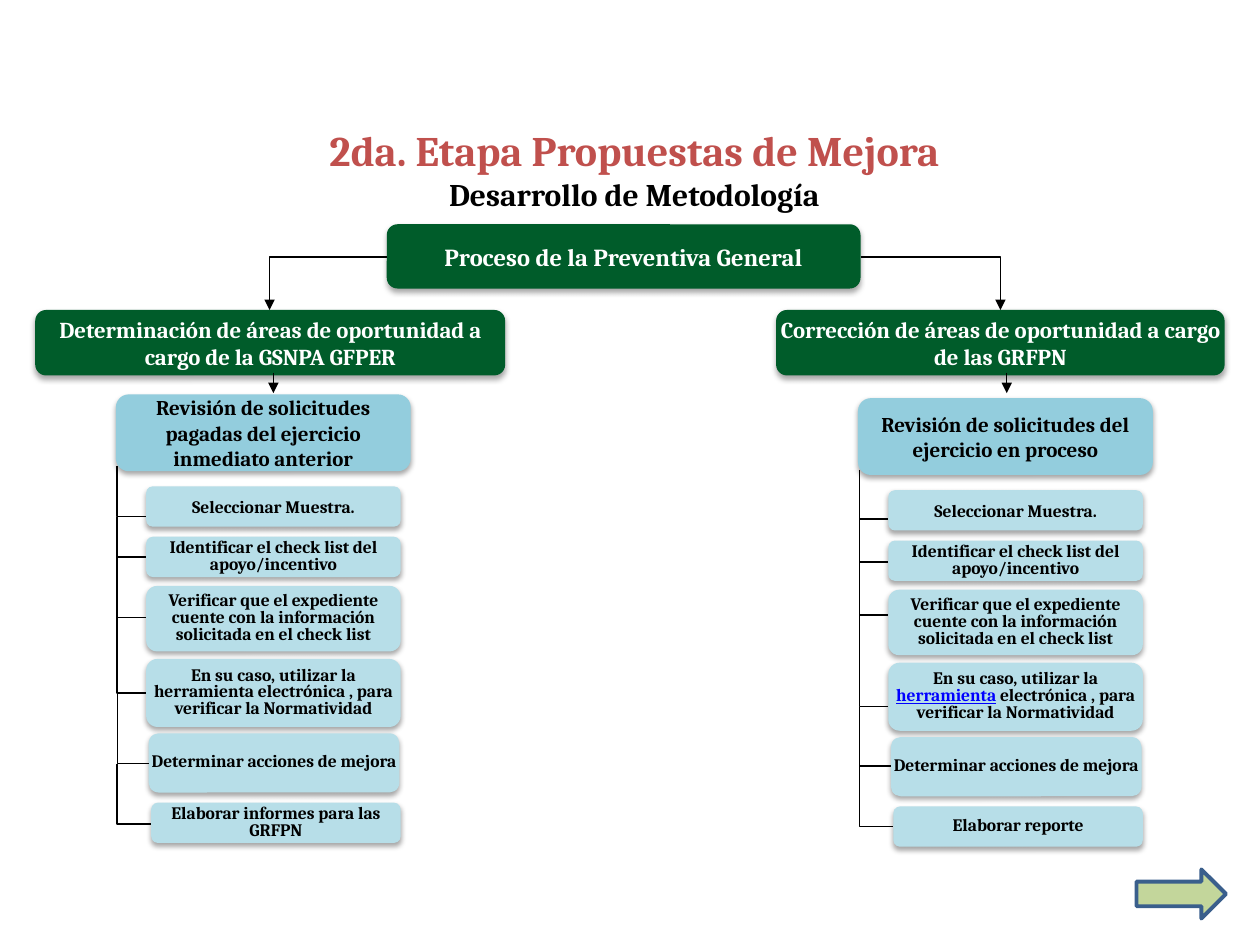
import pptx
import pptx.util
import pptx.dml.color
import pptx.enum.shapes
import pptx.enum.text
import pptx.oxml.ns
from lxml import etree

SHAPE = pptx.enum.shapes.MSO_SHAPE
LINK = pptx.enum.shapes.MSO_CONNECTOR
ANCHOR = pptx.enum.text.MSO_ANCHOR
CENTER = pptx.enum.text.PP_ALIGN.CENTER
FONT = "Cambria"
GREEN, BLUE, PALE = "005C2A", "93CDDD", "B7DEE8"
BLACK, WHITE = "000000", "FFFFFF"

STEPS = [
    (2.4, 38.6, 20.2, 3.2),
    (2.4, 42.6, 20.2, 3.2),
    (2.4, 46.5, 20.2, 5.2),
    (2.4, 52.3, 20.2, 5.4),
    (2.6, 58.2, 19.9, 4.7),
    (2.8, 63.7, 19.8, 3.2),
]
TASKS = [
    "Seleccionar Muestra.",
    "Identificar el check list del apoyo/incentivo",
    "Verificar que el expediente cuente con la información solicitada en el check list",
]
LEFT = TASKS + [
    "En su caso, utilizar la herramienta electrónica , para verificar la Normatividad",
    "Determinar acciones de mejora",
    "Elaborar informes para las GRFPN",
]
RIGHT = TASKS + [
    "En su caso, utilizar la |herramienta| electrónica , para verificar la Normatividad",
    "Determinar acciones de mejora",
    "Elaborar reporte",
]


def grid(count):
    return pptx.util.Inches(count / 10)


def color(code):
    return pptx.dml.color.RGBColor.from_string(code)


def node(parent, tag, **attrs):
    return etree.SubElement(parent, pptx.oxml.ns.qn(tag), attrs)


def style(font, size, code):
    font.name = FONT
    font.size = pptx.util.Pt(size)
    font.bold = True
    font.color.rgb = color(code)


def shade(shape):
    shape.shadow.inherit = False
    effect = shape._element.spPr.find(pptx.oxml.ns.qn("a:effectLst"))
    outer = node(effect, "a:outerShdw", blurRad="39370", dist="22860",
                 dir="5400000", rotWithShape="0")
    tint = node(outer, "a:srgbClr", val=BLACK)
    node(tint, "a:alpha", val="35000")


def box(slide, place, text, fill, size, ink=BLACK, space=1.0):
    shape = slide.shapes.add_shape(SHAPE.ROUNDED_RECTANGLE, *map(grid, place))
    shape.fill.solid()
    shape.fill.fore_color.rgb = color(fill)
    shape.line.fill.background()
    shade(shape)
    frame = shape.text_frame
    frame.word_wrap = True
    frame.vertical_anchor = ANCHOR.MIDDLE
    frame.margin_left = frame.margin_right = 0
    frame.margin_top = frame.margin_bottom = 0
    para = frame.paragraphs[0]
    para.alignment = CENTER
    para.line_spacing = space
    for index, part in enumerate(text.split("|")):
        run = para.add_run()
        run.text = part
        style(run.font, size, "0000FF" if index % 2 else ink)
        if index % 2:
            run.font.underline = True


def wire(slide, kind, ends, arrow=False):
    line = slide.shapes.add_connector(kind, *map(grid, ends))
    line.line.color.rgb = color(BLACK)
    line.line.width = pptx.util.Pt(0.75)
    props = line._element.spPr
    if kind == LINK.ELBOW:
        props.find(pptx.oxml.ns.qn("a:prstGeom")).set("prst", "bentConnector2")
    if arrow:
        node(line.line._get_or_add_ln(), "a:tailEnd", type="triangle")
    node(props, "a:effectLst")
    return line


def branch(slide, left, top, right, low):
    mid, half = (left + right) / 2, (low - top) / 2
    center, rise = (top + low) / 2, (right - left) / 2
    ends = mid + half, center - rise, mid - half, center + rise
    line = wire(slide, LINK.ELBOW, ends)
    line._element.spPr.find(pptx.oxml.ns.qn("a:xfrm")).set("rot", "16200000")


def title(slide):
    shape = slide.shapes.title
    shape.left, shape.top, shape.width, shape.height = map(grid, (3.5, 9.4, 93.7, 8.1))
    frame = shape.text_frame
    frame.text = "2da. Etapa Propuestas de Mejora\nDesarrollo de Metodología"
    frame.word_wrap = True
    frame.auto_size = pptx.enum.text.MSO_AUTO_SIZE.NONE
    frame.vertical_anchor = ANCHOR.TOP
    for para, size, code in zip(frame.paragraphs, (24, 18), ("C0504D", BLACK)):
        para.alignment = CENTER
        style(para.runs[0].font, size, code)


def column(slide, left, drop, head, tasks, stops):
    box(slide, (left, 31.3 + drop, 23.4, 6.1), head, BLUE, 12)
    start = 37 + drop
    for (inset, top, width, height), task, stop in zip(STEPS, tasks, stops):
        space = 1.0 if task == tasks[0] else 0.8
        box(slide, (left + inset, top + drop, width, height), task, PALE, 10, space=space)
        branch(slide, left + 0.1, start, left + inset, stop)
        start = stop


def arrow(slide):
    shape = slide.shapes.add_shape(SHAPE.RIGHT_ARROW, *map(grid, (90.2, 69, 7.1, 3.9)))
    shape.shadow.inherit = False
    shape.fill.solid()
    shape.fill.fore_color.rgb = color("C3D69B")
    shape.line.color.rgb = color("3A5F8C")
    shape.line.width = pptx.util.Pt(2.25)


def main():
    deck = pptx.Presentation()
    deck.slide_width, deck.slide_height = grid(100), grid(75)
    slide = deck.slides.add_slide(deck.slide_layouts[5])
    title(slide)
    box(slide, (30.7, 17.8, 37.6, 5.1), "Proceso de la Preventiva General", GREEN, 14, WHITE)
    box(slide, (2.8, 24.6, 37.3, 5.2),
        "Determinación de áreas de oportunidad a cargo de la GSNPA GFPER", GREEN, 13, WHITE)
    box(slide, (61.6, 24.6, 35.6, 5.2),
        "Corrección de áreas de oportunidad a cargo de las GRFPN", GREEN, 13, WHITE)
    column(slide, 9.2, 0, "Revisión de solicitudes pagadas del ejercicio inmediato anterior",
           LEFT, (41, 44.2, 49, 55, 60.6, 65.4))
    column(slide, 68.1, 0.3, "Revisión de solicitudes del ejercicio en proceso",
           RIGHT, (41.2, 44.6, 48.8, 56.1, 60.8, 65.6))
    for start, end in ((30.7, 21.4), (68.3, 79.4)):
        wire(slide, LINK.ELBOW, (start, 20.4, end, 24.6), arrow=True)
    for spot in (21.7, 79.9):
        wire(slide, LINK.STRAIGHT, (spot, 29.6, spot, 31.2), arrow=True)
    arrow(slide)
    deck.save("out.pptx")


if __name__ == "__main__":
    main()
